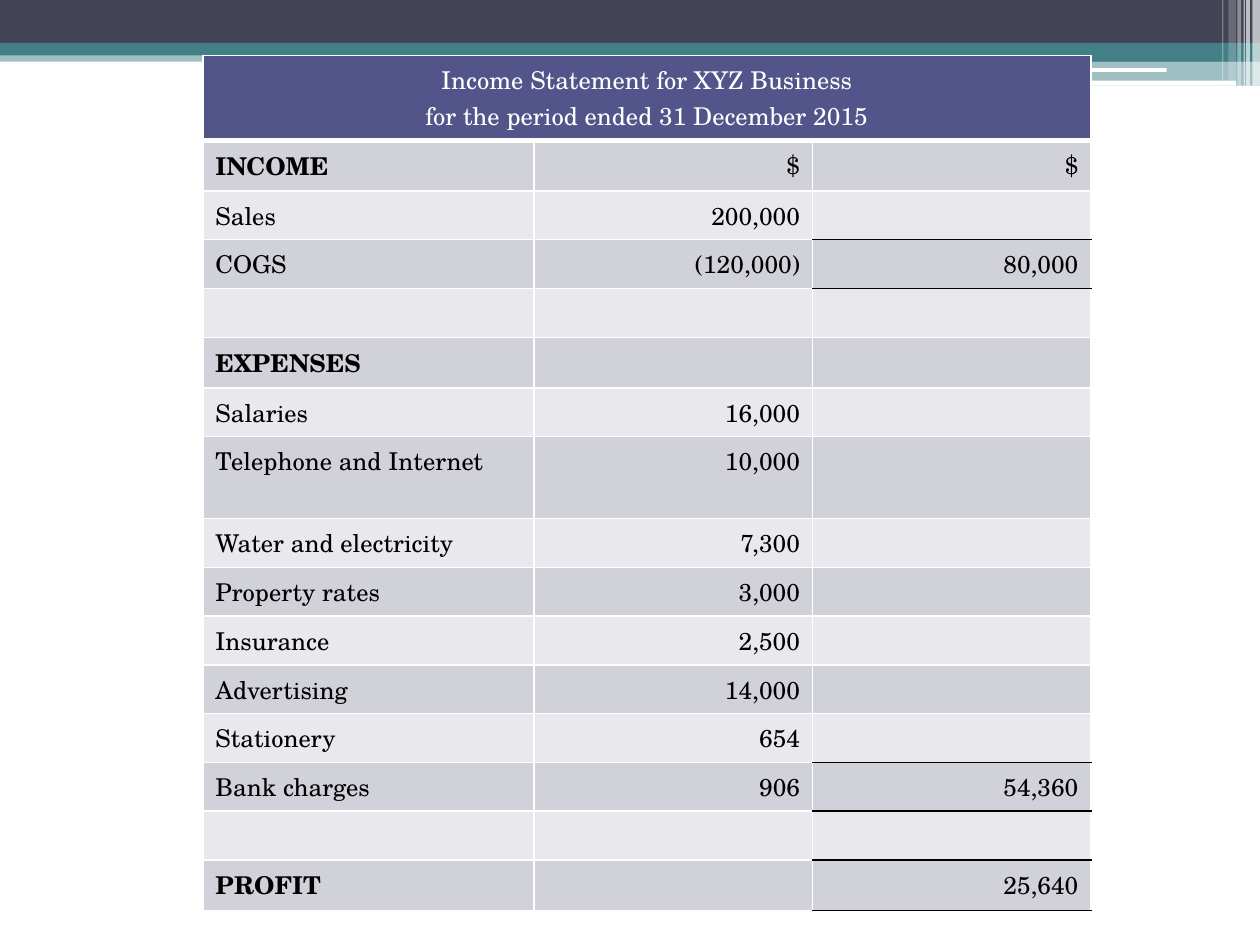
"""Build an income statement slide with a banded header decoration."""
import lxml.etree
import pptx
import pptx.dml.color
import pptx.enum.shapes
import pptx.enum.text
import pptx.oxml.ns
import pptx.util

Inches = pptx.util.Inches
RGBColor = pptx.dml.color.RGBColor
Shape = pptx.enum.shapes.MSO_SHAPE
Align = pptx.enum.text.PP_ALIGN
qn = pptx.oxml.ns.qn

WHITE = RGBColor(0xFF, 0xFF, 0xFF)
BLACK = RGBColor(0x00, 0x00, 0x00)
SLATE = RGBColor(0x42, 0x44, 0x56)
TEAL = RGBColor(0x43, 0x80, 0x86)
PURPLE = RGBColor(0x53, 0x54, 0x8A)
DARK_BAND = RGBColor(0xD1, 0xD1, 0xDA)
LIGHT_BAND = RGBColor(0xE9, 0xE9, 0xED)
FONT = "TeX Gyre Schola"

RECT, ROUND = Shape.RECTANGLE, Shape.ROUNDED_RECTANGLE
DECORATION = [
    (RECT, 0, 0.4, 10, 0.09, TEAL, 50),
    (RECT, 0, 0, 10, 0.34, SLATE, 100),
    (RECT, 0, 0.34, 10, 0.1, TEAL, 100),
    (RECT, 5.92, 0.39, 4.08, 0.1, TEAL, 100),
    (RECT, 5.92, 0.48, 4.08, 0.2, TEAL, 50),
    (ROUND, 5.91, 0.54, 3.35, 0.03, WHITE, 100),
    (ROUND, 8.06, 0.64, 1.75, 0.04, WHITE, 100),
    (RECT, 9.94, 0, 0.06, 0.68, WHITE, 65),
    (RECT, 9.89, 0, 0.03, 0.68, WHITE, 65),
    (RECT, 9.87, 0, 0.01, 0.68, WHITE, 60),
    (RECT, 9.82, 0, 0.03, 0.68, WHITE, 40),
    (RECT, 9.75, 0, 0.06, 0.64, WHITE, 20),
    (RECT, 9.7, 0, 0.01, 0.64, WHITE, 30),
]
STATEMENT = [
    ("Income Statement for XYZ Business\nfor the period ended 31 December 2015", "", ""),
    ("INCOME", "$", "$"),
    ("Sales", "200,000", ""),
    ("COGS", "(120,000)", "80,000"),
    ("", "", ""),
    ("EXPENSES", "", ""),
    ("Salaries", "16,000", ""),
    ("Telephone and Internet", "10,000", ""),
    ("Water and electricity", "7,300", ""),
    ("Property rates", "3,000", ""),
    ("Insurance", "2,500", ""),
    ("Advertising", "14,000", ""),
    ("Stationery", "654", ""),
    ("Bank charges", "906", "54,360"),
    ("", "", ""),
    ("PROFIT", "", "25,640"),
]
HEADINGS = ("INCOME", "EXPENSES", "PROFIT")
TALL_ROWS = (0, 7)
RULED_ROWS = (2, 3, 12, 13, 14, 15)
COLUMN_WIDTHS = (2.63, 2.21, 2.21)


def add_border(cell, side, color, width):
    line = lxml.etree.SubElement(
        cell._tc.get_or_add_tcPr(), qn(f"a:ln{side}"), w=str(pptx.util.Pt(width))
    )
    fill = lxml.etree.SubElement(line, qn("a:solidFill"))
    lxml.etree.SubElement(fill, qn("a:srgbClr"), val=str(color))


presentation = pptx.Presentation()
presentation.slide_width = Inches(10)
presentation.slide_height = Inches(7.5)
slide = presentation.slides.add_slide(presentation.slide_layouts[6])

for kind, left, top, width, height, color, opacity in DECORATION:
    shape = slide.shapes.add_shape(
        kind, Inches(left), Inches(top), Inches(width), Inches(height)
    )
    shape.shadow.inherit = False
    shape.line.fill.background()
    shape.fill.solid()
    shape.fill.fore_color.rgb = color
    if opacity < 100:
        color_element = shape.fill._xPr.find(qn("a:solidFill"))[0]
        lxml.etree.SubElement(color_element, qn("a:alpha"), val=str(opacity * 1000))

table = slide.shapes.add_table(
    len(STATEMENT), 3, Inches(1.61), Inches(0.44), Inches(7.06), Inches(6.48)
).table
table.first_row = False
table.horz_banding = False
for column, width in zip(table.columns, COLUMN_WIDTHS):
    column.width = Inches(width)

for row_index, texts in enumerate(STATEMENT):
    is_title = row_index == 0
    table.rows[row_index].height = Inches(0.65 if row_index in TALL_ROWS else 0.37)
    for column_index, text in enumerate(texts):
        cell = table.cell(row_index, column_index)
        is_total = column_index == 2
        top_color = BLACK if is_total and row_index - 1 in RULED_ROWS else WHITE
        bottom_color = BLACK if is_total and row_index in RULED_ROWS else WHITE
        add_border(cell, "L", WHITE, 1)
        add_border(cell, "R", WHITE, 1)
        add_border(cell, "T", top_color, 3 if row_index == 1 else 1)
        add_border(cell, "B", bottom_color, 3 if is_title else 1)
        cell.fill.solid()
        band = DARK_BAND if row_index % 2 else LIGHT_BAND
        cell.fill.fore_color.rgb = PURPLE if is_title else band
        cell.text = text
        for paragraph in cell.text_frame.paragraphs:
            if is_title:
                paragraph.alignment = Align.CENTER
            elif column_index:
                paragraph.alignment = Align.RIGHT
            paragraph.font.name = FONT
            paragraph.font.size = pptx.util.Pt(14)
            paragraph.font.bold = text in HEADINGS
            paragraph.font.color.rgb = WHITE if is_title else BLACK

table.cell(0, 0).merge(table.cell(0, 2))
presentation.save("out.pptx")
